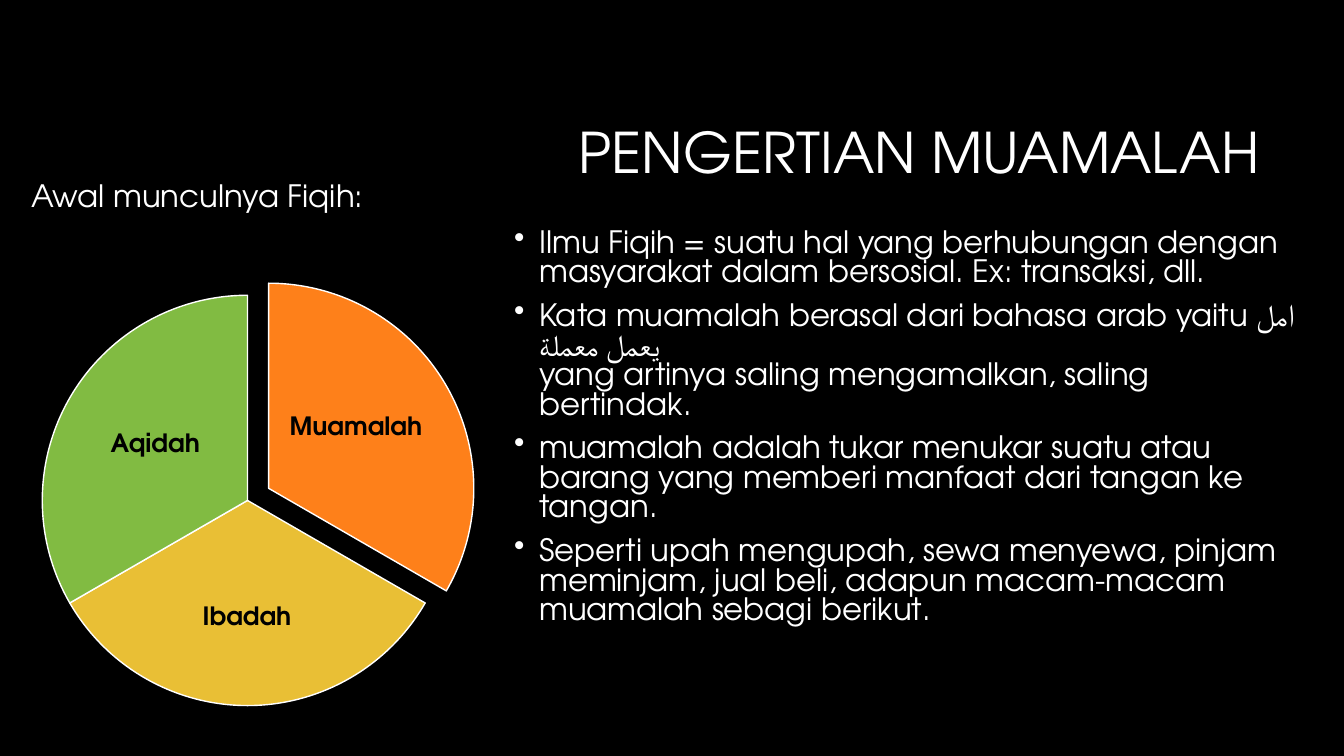
"""Build the slide on the meaning of muamalah, with a three-part pie."""
import pptx
import pptx.dml.color
import pptx.enum.shapes
import pptx.enum.text
import pptx.oxml.ns
import pptx.util
from lxml import etree

PX = 9144
FONT = "TeX Gyre Adventor"
BLACK = pptx.dml.color.RGBColor(0x00, 0x00, 0x00)
WHITE = pptx.dml.color.RGBColor(0xFF, 0xFF, 0xFF)
ORANGE = pptx.dml.color.RGBColor(0xFE, 0x80, 0x1A)
YELLOW = pptx.dml.color.RGBColor(0xE9, 0xBF, 0x35)
GREEN = pptx.dml.color.RGBColor(0x81, 0xBB, 0x42)
ALIGN = pptx.enum.text.PP_ALIGN
ANCHOR = pptx.enum.text.MSO_ANCHOR


def to_emu(box):
    return [length * PX for length in box]


def add_text(slide, box, texts, size, color=WHITE, align=ALIGN.LEFT,
             anchor=ANCHOR.TOP, spacing=0.9, bold=False, bullets=False):
    text_frame = slide.shapes.add_textbox(*to_emu(box)).text_frame
    text_frame.word_wrap = True
    text_frame.vertical_anchor = anchor
    for index, text in enumerate(texts):
        paragraph = text_frame.add_paragraph() if index else text_frame.paragraphs[0]
        paragraph.text = text
        paragraph.alignment = align
        paragraph.line_spacing = spacing
        if index:
            paragraph.space_before = pptx.util.Pt(10)
        if bullets:
            properties = paragraph._p.get_or_add_pPr()
            properties.set("marL", str(25 * PX))
            properties.set("indent", str(-25 * PX))
            bullet = etree.SubElement(properties, pptx.oxml.ns.qn("a:buChar"))
            bullet.set("char", "•")
        for run in paragraph.runs:
            run.font.name = FONT
            run.font.size = pptx.util.Pt(size)
            run.font.bold = bold
            run.font.color.rgb = color
    return text_frame


presentation = pptx.Presentation()
presentation.slide_width = 1333 * PX
presentation.slide_height = 750 * PX
slide = presentation.slides.add_slide(presentation.slide_layouts[6])
slide.background.fill.solid()
slide.background.fill.fore_color.rgb = BLACK

add_text(slide, (317, 84, 942, 141), ["PENGERTIAN MUAMALAH"], 40,
         align=ALIGN.RIGHT, anchor=ANCHOR.MIDDLE)

definitions = [
    "Ilmu Fiqih = suatu hal yang berhubungan dengan masyarakat dalam bersosial. "
    "Ex: transaksi, dll.",
    "Kata muamalah berasal dari bahasa arab yaitu امل يعمل معملة\n"
    "yang artinya saling mengamalkan, saling bertindak.",
    "muamalah adalah tukar menukar suatu atau barang yang memberi manfaat "
    "dari tangan ke tangan.",
    "Seperti upah mengupah, sewa menyewa, pinjam meminjam, jual beli, "
    "adapun macam-macam muamalah sebagi berikut.",
]
add_text(slide, (500, 223, 800, 440), definitions, 22, spacing=0.8, bullets=True)

PIE_SIZE = 407
slices = [
    ("Muamalah", ORANGE, (63, 281), (162, 18), (284, 356, 138, 136)),
    ("Ibadah", YELLOW, (42, 293), (18, 90), (153, 549, 184, 126)),
    ("Aqidah", GREEN, (42, 293), (90, 162), (85, 373, 138, 136)),
]
for label, color, corner, angles, label_box in slices:
    pie = slide.shapes.add_shape(pptx.enum.shapes.MSO_SHAPE.PIE,
                                 *to_emu((*corner, PIE_SIZE, PIE_SIZE)))
    pie.adjustments[0], pie.adjustments[1] = angles
    pie.shadow.inherit = False
    pie.fill.solid()
    pie.fill.fore_color.rgb = color
    pie.line.color.rgb = WHITE
    pie.line.width = pptx.util.Pt(1)
    label_frame = add_text(slide, label_box, [label], 18, BLACK, ALIGN.CENTER,
                           ANCHOR.MIDDLE, bold=True)
    label_frame.margin_left = label_frame.margin_right = 3 * PX
    label_frame.margin_top = label_frame.margin_bottom = 3 * PX

add_text(slide, (21, 175, 400, 61), ["Awal munculnya Fiqih:"], 22)

presentation.save("out.pptx")
